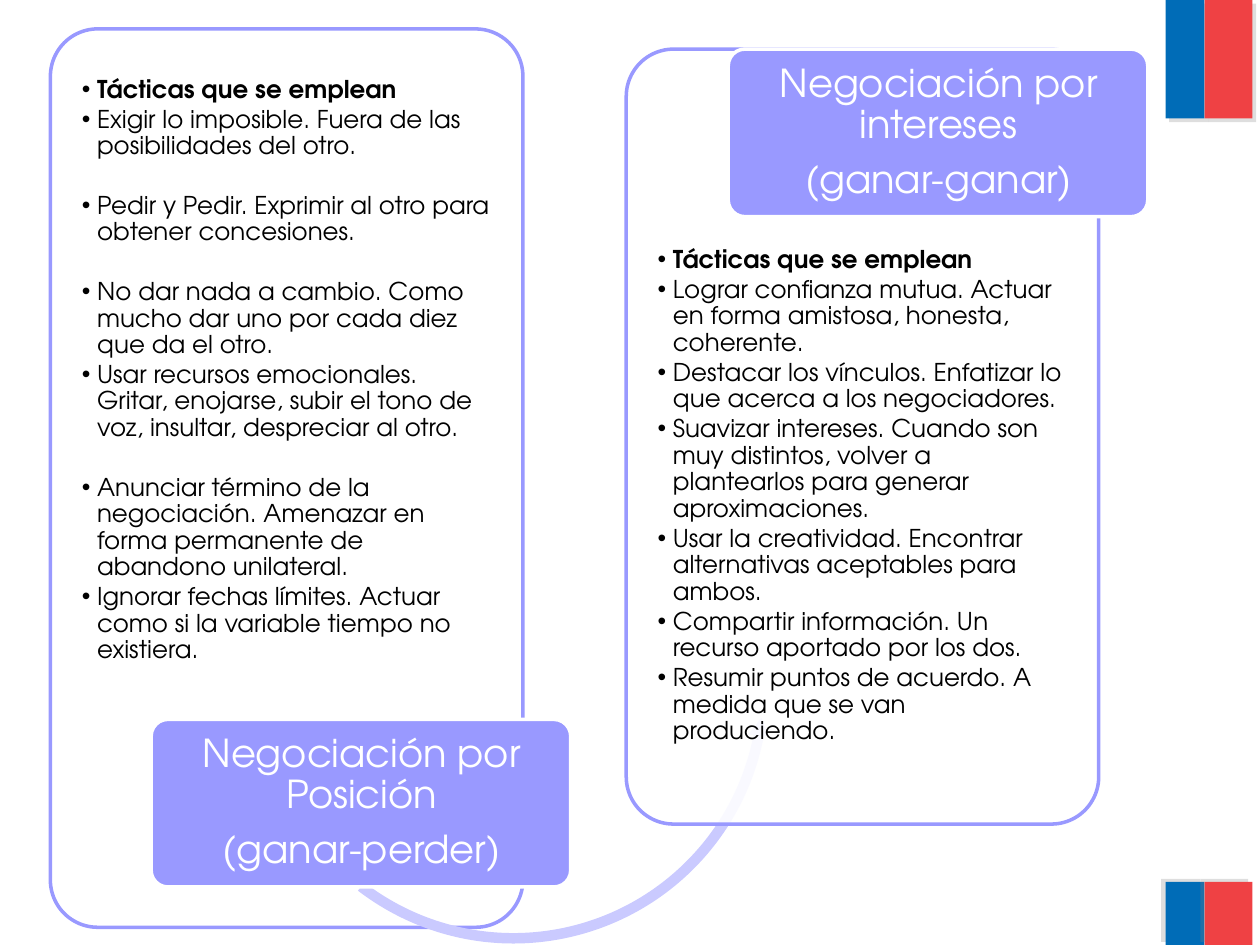
"""Build a slide that compares two styles of negotiation."""
from dataclasses import dataclass

from lxml import etree
from pptx import Presentation
from pptx.dml.color import RGBColor
from pptx.enum.shapes import MSO_SHAPE
from pptx.enum.text import MSO_ANCHOR, MSO_AUTO_SIZE, PP_ALIGN
from pptx.oxml.ns import qn
from pptx.util import Inches, Pt

RECT = MSO_SHAPE.RECTANGLE
ROUND = MSO_SHAPE.ROUNDED_RECTANGLE
ARC = MSO_SHAPE.LEFT_CIRCULAR_ARROW
MIDDLE, TOP = MSO_ANCHOR.MIDDLE, MSO_ANCHOR.TOP
CENTER, LEFT = PP_ALIGN.CENTER, PP_ALIGN.LEFT
FIXED = MSO_AUTO_SIZE.NONE
COMPARE = 4


@dataclass(frozen=True)
class Theme:
    font: str = "TeX Gyre Adventor"
    head: int = 22
    body: int = 14
    lilac: str = "9999FF"
    pale: str = "CACAFF"
    white: str = "FFFFFF"
    black: str = "000000"
    blue: str = "006CB7"
    red: str = "EF4144"
    shade: str = "808080"


THEME = Theme()
TACTICS = "Tácticas que se emplean"
HARD = [
    (TACTICS, 2),
    ("Exigir lo imposible. Fuera de las posibilidades del otro.", 19),
    ("Pedir y Pedir. Exprimir al otro para obtener concesiones.", 19),
    ("No dar nada a cambio. Como mucho dar uno por cada diez que da el otro.", 2),
    ("Usar recursos emocionales. Gritar, enojarse, subir el tono de voz, "
     "insultar, despreciar al otro.", 19),
    ("Anunciar término de la negociación. Amenazar en forma permanente de "
     "abandono unilateral.", 2),
    ("Ignorar fechas límites. Actuar como si la variable tiempo no existiera.", 2),
]
SOFT = [(text, 2) for text in (
    TACTICS,
    "Lograr confianza mutua. Actuar en forma amistosa, honesta, coherente.",
    "Destacar los vínculos. Enfatizar lo que acerca a los negociadores.",
    "Suavizar intereses. Cuando son muy distintos, volver a plantearlos para "
    "generar aproximaciones.",
    "Usar la creatividad. Encontrar alternativas aceptables para ambos.",
    "Compartir información. Un recurso aportado por los dos.",
    "Resumir puntos de acuerdo. A medida que se van produciendo.",
)]


def add_form(slide, kind, box, fill, line=None, adjust=()):
    """Add a preset shape with a flat fill and an optional outline."""
    form = slide.shapes.add_shape(kind, *map(Inches, box))
    form.shadow.inherit = False
    form.fill.solid()
    form.fill.fore_color.rgb = RGBColor.from_string(fill)
    if line:
        form.line.color.rgb = RGBColor.from_string(line)
        form.line.width = Pt(2)
    else:
        form.line.fill.background()
    for spot, value in enumerate(adjust):
        form.adjustments[spot] = value
    return form


def set_alpha(node, percent):
    """Give a colour node its opacity."""
    etree.SubElement(node, qn("a:alpha"), val=str(percent * 1000))


def add_flag(slide, top, high, angle):
    """Add a blue and red pair of bars that cast a faint shadow."""
    for left, wide, fill in ((9.25, 0.31, THEME.blue), (9.56, 0.38, THEME.red)):
        bar = add_form(slide, RECT, (left, top, wide, high), fill)
        effects = bar._element.spPr.find(qn("a:effectLst"))
        shade = etree.SubElement(effects, qn("a:outerShdw"), blurRad="0",
                                 dist=str(Pt(3)), dir=str(angle * 60000))
        color = etree.SubElement(shade, qn("a:srgbClr"), val=THEME.shade)
        set_alpha(color, 25)


def add_card(slide, box):
    """Add a rounded, slightly clear card."""
    card = add_form(slide, ROUND, box, THEME.white, THEME.lilac, (0.1,))
    set_alpha(card._element.spPr.find(".//" + qn("a:srgbClr")), 90)


def fill_text(slide, index, box, items, size, color, align, anchor, inset, hang):
    """Move a placeholder to the front and write spaced paragraphs in it."""
    holder = next(h for h in slide.placeholders
                  if h.placeholder_format.idx == index)
    slide.shapes._spTree.append(holder._element)
    holder.left, holder.top, holder.width, holder.height = map(Inches, box)
    frame = holder.text_frame
    frame.word_wrap, frame.auto_size = True, FIXED
    frame.vertical_anchor = anchor
    frame.margin_left = frame.margin_right = Inches(inset[0])
    frame.margin_top = frame.margin_bottom = Inches(inset[1])
    frame.text = "\n".join(text for text, _ in items)
    for para, (text, gap) in zip(frame.paragraphs, items):
        para.alignment, para.line_spacing = align, 0.9
        para.space_before, para.space_after = Pt(0), Pt(gap)
        para.font.name, para.font.size = THEME.font, Pt(size)
        para.font.bold = text == TACTICS
        para.font.color.rgb = RGBColor.from_string(color)
        props = para._p.get_or_add_pPr()
        props.set("marL", str(Inches(hang)))
        props.set("indent", str(Inches(-hang)))


def add_list(slide, index, box, items):
    """Write a bullet list."""
    fill_text(slide, index, box, items, THEME.body, THEME.black,
              LEFT, TOP, (0.14, 0.14), 0.12)


def add_badge(slide, index, left, top, lines):
    """Add a lilac badge with its heading on top."""
    add_form(slide, ROUND, (left, top, 3.33, 1.33), THEME.lilac,
             THEME.white, (0.1,))
    fill_text(slide, index, (left + 0.04, top + 0.04, 3.26, 1.25),
              [(line, 7.7) for line in lines], THEME.head, THEME.white,
              CENTER, MIDDLE, (0.05, 0.03), 0)


def main():
    """Build and save the slide."""
    deck = Presentation()
    deck.slide_width, deck.slide_height = Inches(10), Inches(7.5)
    slide = deck.slides.add_slide(deck.slide_layouts[COMPARE])
    title = slide.shapes.title._element
    title.getparent().remove(title)

    add_flag(slide, 0, 0.94, 45)
    add_flag(slide, 7, 0.5, 215)

    add_card(slide, (0.4, 0.23, 3.75, 7.13))
    add_list(slide, 2, (0.51, 0.47, 3.53, 5.25), HARD)
    add_form(slide, ARC, (2.01, 3.4, 4.13, 4.13), THEME.pale,
             adjust=(0.02, 2.48, 6.52, 76.53, 0.02))
    add_badge(slide, 1, 1.2, 5.71, ("Negociación por Posición", "(ganar-perder)"))

    add_card(slide, (4.97, 0.39, 3.75, 6.15))
    add_list(slide, 4, (5.08, 1.82, 3.53, 4.62), SOFT)
    add_badge(slide, 3, 5.78, 0.39, ("Negociación por intereses", "(ganar-ganar)"))
    deck.save("out.pptx")


if __name__ == "__main__":
    main()
